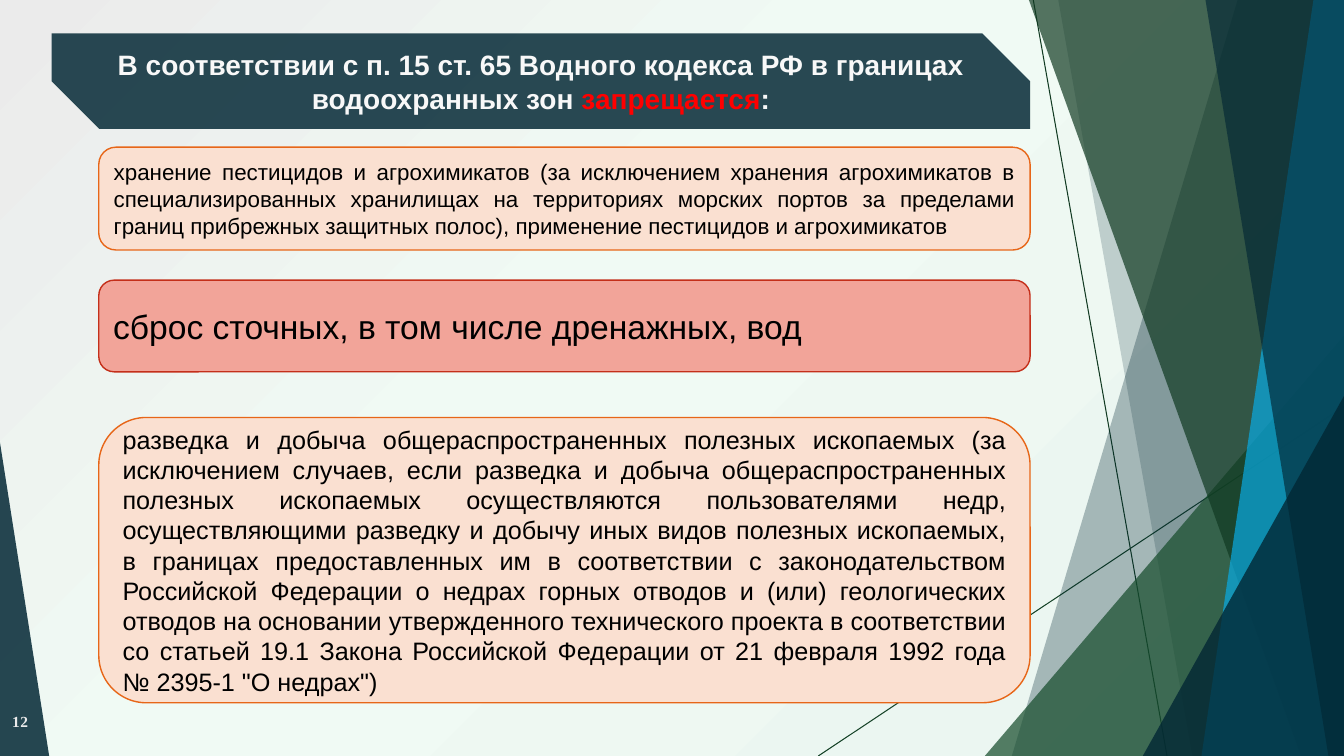
from collections import namedtuple
from dataclasses import dataclass

from lxml.etree import SubElement
from pptx import Presentation
from pptx.dml.color import RGBColor
from pptx.enum.shapes import MSO_CONNECTOR, MSO_SHAPE
from pptx.enum.text import MSO_ANCHOR, PP_ALIGN
from pptx.oxml import parse_xml
from pptx.oxml.ns import nsdecls, qn
from pptx.util import Cm, Pt

Box = namedtuple("Box", "x y w h")
Run = namedtuple("Run", "text color")
Card = namedtuple("Card", "y h size fill line text")


@dataclass(frozen=True)
class Theme:
    """Colours, fonts and type sizes of the slide."""
    navy: str = "022734"
    green: str = "113A22"
    leaf: str = "174D2D"
    ray: str = "144126"
    sky: str = "09ABE4"
    black: str = "000000"
    white: str = "F8F8F8"
    grey: str = "EBEBEB"
    alert: str = "FF0000"
    peach: str = "FAE0D1"
    orange: str = "E76618"
    rose: str = "F2A499"
    red: str = "C42F1A"
    backdrop: tuple = ((0, "E9F4EF"), (58, "F0FAF4"), (100, "EBEBEB"))
    font: str = "Arial"
    number_font: str = "Times New Roman"
    title_size: int = 20
    number_size: int = 11
    small: int = 16
    medium: int = 18
    large: int = 24


T = Theme()
PAGE = Box(0, 0, 33.87, 19.05)
CARDS = (
    Card(10.52, 7.19, T.medium, T.peach, T.orange,
         "разведка и добыча общераспространенных полезных ископаемых (за исключением случаев, "
         "если разведка и добыча общераспространенных полезных ископаемых осуществляются "
         "пользователями недр, осуществляющими разведку и добычу иных видов полезных ископаемых, "
         "в границах предоставленных им в соответствии с законодательством Российской Федерации "
         "о недрах горных отводов и (или) геологических отводов на основании утвержденного "
         "технического проекта в соответствии со статьей 19.1 Закона Российской Федерации "
         "от 21 февраля 1992 года № 2395-1 \"О недрах\")"),
    Card(3.71, 2.59, T.small, T.peach, T.orange,
         "хранение пестицидов и агрохимикатов (за исключением хранения агрохимикатов в "
         "специализированных хранилищах на территориях морских портов за пределами границ "
         "прибрежных защитных полос), применение пестицидов и агрохимикатов"),
    Card(7.06, 2.31, T.large, T.rose, T.red, "сброс сточных, в том числе дренажных, вод"),
)


def paint(sp, color, opacity=100, line=None):
    """Give a shape a flat fill, an optional outline and no shadow."""
    sp.shadow.inherit = False
    sp.fill.solid()
    sp.fill.fore_color.rgb = RGBColor.from_string(color)
    if opacity < 100:
        clr = sp.fill._xPr.find(qn("a:solidFill"))[0]
        SubElement(clr, qn("a:alpha")).set("val", str(opacity * 1000))
    if line:
        sp.line.color.rgb = RGBColor.from_string(line)
        sp.line.width = Pt(1)
    else:
        sp.line.fill.background()


def add_shape(s, kind, box, adjustments=()):
    """Add a preset shape in a box given in centimetres."""
    sp = s.shapes.add_shape(kind, *map(Cm, box))
    for i, value in enumerate(adjustments):
        sp.adjustments[i] = value
    return sp


def write(sp, runs, size, align, font=T.font, bold=False):
    """Write one paragraph of coloured runs, centred vertically."""
    tf = sp.text_frame
    tf.word_wrap = True
    tf.vertical_anchor = MSO_ANCHOR.MIDDLE
    p = tf.paragraphs[0]
    p.alignment = align
    for run in runs:
        r = p.add_run()
        r.text = run.text
        r.font.name = font
        r.font.size = Pt(size)
        r.font.bold = bold
        r.font.color.rgb = RGBColor.from_string(run.color)


def set_backdrop(s):
    """Set the radial background gradient."""
    stops = "".join(f'<a:gs pos="{pos * 1000}"><a:srgbClr val="{color}"/></a:gs>'
                    for pos, color in T.backdrop)
    bg = parse_xml(
        f'<p:bg {nsdecls("p", "a")}><p:bgPr><a:gradFill><a:gsLst>{stops}</a:gsLst>'
        '<a:path path="circle"><a:fillToRect l="100000" t="100000"/></a:path>'
        '</a:gradFill><a:effectLst/></p:bgPr></p:bg>')
    s.element.find(qn("p:cSld")).insert(0, bg)


def add_ray(s, box, start, end, color):
    """Draw a thin line between two points of the box."""
    line = s.shapes.add_connector(
        MSO_CONNECTOR.STRAIGHT, Cm(box.x + start[0]), Cm(box.y + start[1]),
        Cm(box.x + end[0]), Cm(box.y + end[1]))
    line.line.color.rgb = RGBColor.from_string(color)
    line.line.width = Pt(0.75)
    SubElement(line._element.spPr, qn("a:effectLst"))


def add_band(s, box, top, bottom, color, opacity):
    """Fill the box to the right of a slanted edge."""
    right, base = box.x + box.w, box.y + box.h
    corners = ((right, box.y), (right, base), (box.x + bottom, base))
    builder = s.shapes.build_freeform(Cm(box.x + top), Cm(box.y))
    builder.add_line_segments([(Cm(x), Cm(y)) for x, y in corners])
    paint(builder.convert_to_shape(), color, opacity)


def add_corner(s, box, left, top, width, apex, color, opacity):
    """Stand a right triangle on the bottom edge of the box."""
    place = Box(box.x + left, box.y + top, width, box.h - top)
    paint(add_shape(s, MSO_SHAPE.ISOSCELES_TRIANGLE, place, (apex,)), color, opacity)


def add_facets(s, box):
    """Draw the translucent facets at both sides of the box."""
    add_ray(s, box, (26.04, 0), (29.41, box.h), T.green)
    add_ray(s, box, (box.w, 10.24), (20.62, box.h), T.ray)
    add_band(s, box, 31.19, 25.5, T.navy, 30)
    add_band(s, box, 26.67, 30.05, T.navy, 20)
    add_corner(s, box, 24.82, 8.46, box.w - 24.82, 1, T.leaf, 72)
    add_band(s, box, 25.93, 32.79, T.green, 70)
    add_band(s, box, 33.1, 30.28, T.sky, 70)
    add_band(s, box, 30.38, 33.48, T.navy, 65)
    add_corner(s, box, 28.8, 9.98, box.w - 28.8, 1, T.navy, 80)
    add_corner(s, box, 0, 11.15, 1.24, 0, T.navy, 85)


def add_title(s, box):
    """Add the heading banner with two snipped corners."""
    sp = add_shape(s, MSO_SHAPE.SNIP_2_DIAG_RECTANGLE, box, (0, 0.5))
    paint(sp, T.navy, 84)
    runs = (
        Run("В соответствии с п. 15 ст. 65 Водного кодекса РФ в границах водоохранных зон ", T.white),
        Run("запрещается", T.alert),
        Run(":", T.white),
    )
    write(sp, runs, T.title_size, PP_ALIGN.CENTER, bold=True)


def add_cards(s, box):
    """Add the rounded cards with the prohibitions."""
    for card in CARDS:
        place = Box(box.x, box.y + card.y, box.w, card.h)
        sp = add_shape(s, MSO_SHAPE.ROUNDED_RECTANGLE, place)
        paint(sp, card.fill, line=card.line)
        write(sp, (Run(card.text, T.black),), card.size, PP_ALIGN.JUSTIFY)


def add_number(s, box):
    """Add the slide number."""
    sp = s.shapes.add_textbox(*map(Cm, box))
    write(sp, (Run("12", T.grey),), T.number_size, PP_ALIGN.RIGHT, T.number_font, True)
    sp.text_frame.paragraphs[0].runs[0].font._element.set("spc", "50")


def main():
    """Build and save the slide."""
    prs = Presentation()
    prs.slide_width, prs.slide_height = Cm(PAGE.w), Cm(PAGE.h)
    s = prs.slides.add_slide(prs.slide_layouts[6])
    set_backdrop(s)
    add_facets(s, PAGE)
    add_title(s, Box(1.3, 0.84, 24.66, 2.41))
    add_cards(s, Box(2.49, 0, 23.47, PAGE.h))
    add_number(s, Box(-0.94, 17.68, 1.9, 1.02))
    prs.save("out.pptx")


if __name__ == "__main__":
    main()
